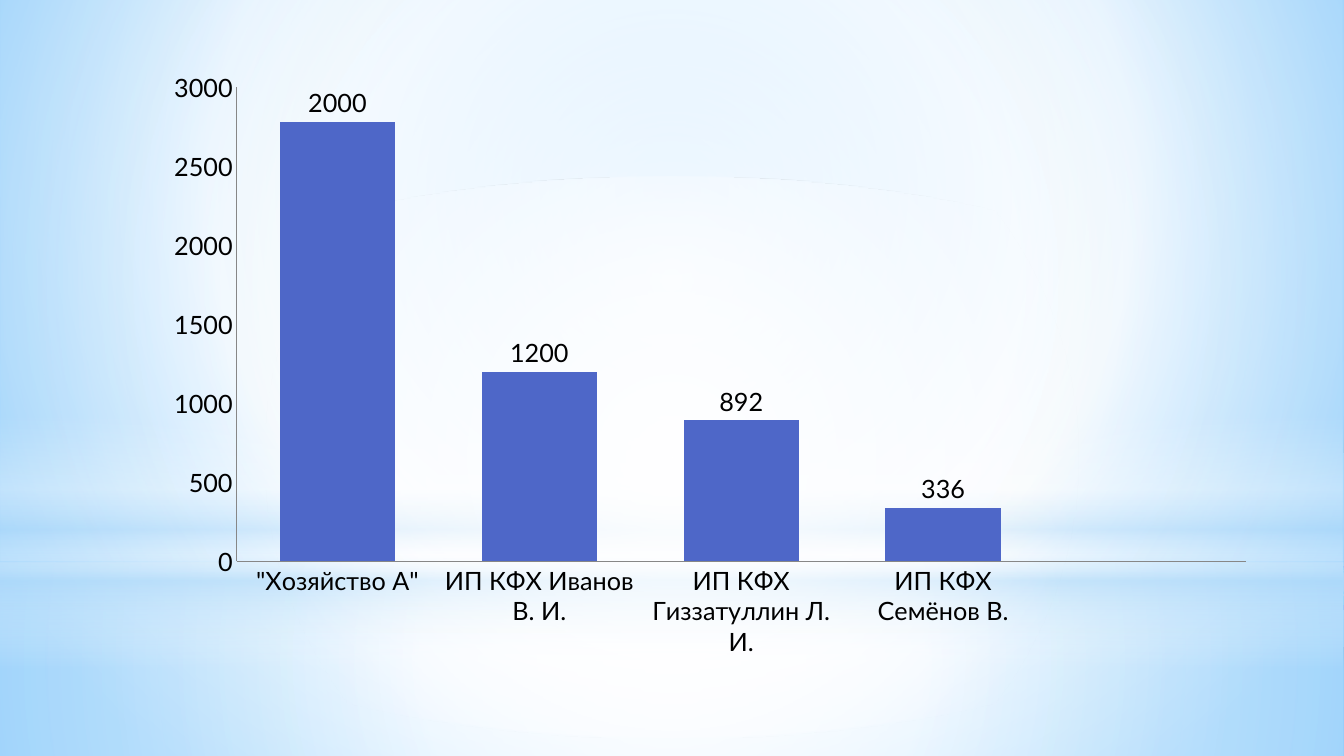
"""Build a slide with a column chart of farms on a soft blue gradient backdrop."""
from lxml import etree
from pptx import Presentation
from pptx.chart.data import CategoryChartData
from pptx.dml.color import RGBColor
from pptx.enum.chart import XL_CHART_TYPE as CT, XL_LABEL_POSITION as LP, XL_TICK_MARK as TM
from pptx.enum.shapes import MSO_SHAPE as SH
from pptx.oxml import parse_xml
from pptx.oxml.ns import nsdecls, qn
from pptx.util import Inches, Pt

BLACK = RGBColor(0x00, 0x00, 0x00)
INDIGO = RGBColor(0x4E, 0x67, 0xC8)
AXIS_GREY = RGBColor(0x87, 0x87, 0x87)
WHITE = RGBColor(0xFF, 0xFF, 0xFF)
PALE = RGBColor(0xB4, 0xDC, 0xFA)
SKY = RGBColor(0x9E, 0xD5, 0xFF)
AZURE = RGBColor(0x5B, 0xB9, 0xFF)
FONT = "Lato"
CENTRE = (50, 50, 50, 50)


def set_gradient(solid, stops, focus):
    """Swap a solid fill for a gradient, circular around focus or vertical without one."""
    gs = "".join(
        f'<a:gs pos="{pos * 1000}"><a:srgbClr val="{color}">'
        f'<a:alpha val="{alpha * 1000}"/></a:srgbClr></a:gs>'
        for pos, color, alpha in stops)
    shade = '<a:lin ang="5400000" scaled="0"/>'
    if focus:
        l, t, r, b = (v * 1000 for v in focus)
        shade = (f'<a:path path="circle"><a:fillToRect l="{l}" t="{t}" '
                 f'r="{r}" b="{b}"/></a:path>')
    grad = parse_xml(f'<a:gradFill {nsdecls("a")} rotWithShape="1">'
                     f'<a:gsLst>{gs}</a:gsLst>{shade}</a:gradFill>')
    solid.getparent().replace(solid, grad)


prs = Presentation()
prs.slide_width, prs.slide_height = Inches(13.33), Inches(7.5)
W = prs.slide_width
s = prs.slides.add_slide(prs.slide_layouts[6])

s.background.fill.solid()
s.background.fill.fore_color.rgb = WHITE
set_gradient(next(s.element.iter(qn("a:solidFill"))),
             [(0, SKY, 100), (60, WHITE, 100), (100, AZURE, 100)], (20, 10, 20, 60))

backdrop = [
    (SH.RECTANGLE, 5.58, 1.92, CENTRE, [(0, WHITE, 91), (37, WHITE, 76), (100, PALE, 79)]),
    (SH.RECTANGLE, 0, 5.58, CENTRE, [(0, WHITE, 89), (48, WHITE, 62), (100, PALE, 79)]),
    (SH.RECTANGLE, 4.12, 2.5, None, [(0, WHITE, 0), (29, WHITE, 30), (45, PALE, 40),
                                     (55, WHITE, 26), (65, PALE, 60), (100, WHITE, 0)]),
    (SH.OVAL, 1.75, 5.58, CENTRE, [(0, WHITE, 100), (56, WHITE, 0)]),
]
for kind, top, height, focus, stops in backdrop:
    sp = s.shapes.add_shape(kind, 0, Inches(top), W, Inches(height))
    sp.shadow.inherit = False
    sp.line.fill.background()
    sp.fill.solid()
    sp.fill.fore_color.rgb = WHITE
    set_gradient(sp.element.spPr.find(qn("a:solidFill")), stops, focus)

data = CategoryChartData()
data.categories = ['"Хозяйство А"', "ИП КФХ Иванов В. И.",
                   "ИП КФХ Гиззатуллин Л. И.", "ИП КФХ Семёнов В.", ""]
data.add_series("Series 1", (2782, 1200, 892, 336, None))
chart = s.shapes.add_chart(CT.COLUMN_CLUSTERED, Inches(1.33), Inches(0.65),
                           Inches(11.05), Inches(6.14), data).chart
chart.has_legend = False
chart.has_title = False
chart.font.name = FONT
chart.font.size = Pt(18)
chart.font.color.rgb = BLACK

for axis in (chart.category_axis, chart.value_axis):
    axis.major_tick_mark = axis.minor_tick_mark = TM.NONE
    axis.has_major_gridlines = False
    axis.format.line.color.rgb = AXIS_GREY
    axis.format.line.width = Pt(0.75)
chart.value_axis.minimum_scale = 0
chart.value_axis.maximum_scale = 3000
chart.value_axis.major_unit = 500

plot = chart.plots[0]
plot.gap_width = 75
plot.vary_by_categories = False
series = plot.series[0]
series.format.fill.solid()
series.format.fill.fore_color.rgb = INDIGO
labels = series.data_labels
labels.show_value = True
labels.position = LP.OUTSIDE_END

first = series.points[0].data_label
r = first.text_frame.paragraphs[0].add_run()
r.text = "2000"
r.font.name, r.font.size = FONT, Pt(18)
r.font.color.rgb = BLACK
first.position = LP.OUTSIDE_END

area = next(chart.element.iter(qn("c:plotArea")))
for old in area.findall(qn("c:layout")):
    area.remove(old)
layout = parse_xml(f'<c:layout {nsdecls("c")}><c:manualLayout/></c:layout>')
settings = [("layoutTarget", "inner"), ("xMode", "edge"), ("yMode", "edge"),
            ("x", 0.092), ("y", 0.035), ("w", 0.906), ("h", 0.766)]
for tag, val in settings:
    etree.SubElement(layout[0], qn(f"c:{tag}")).set("val", str(val))
area.insert(0, layout)

prs.save("out.pptx")
